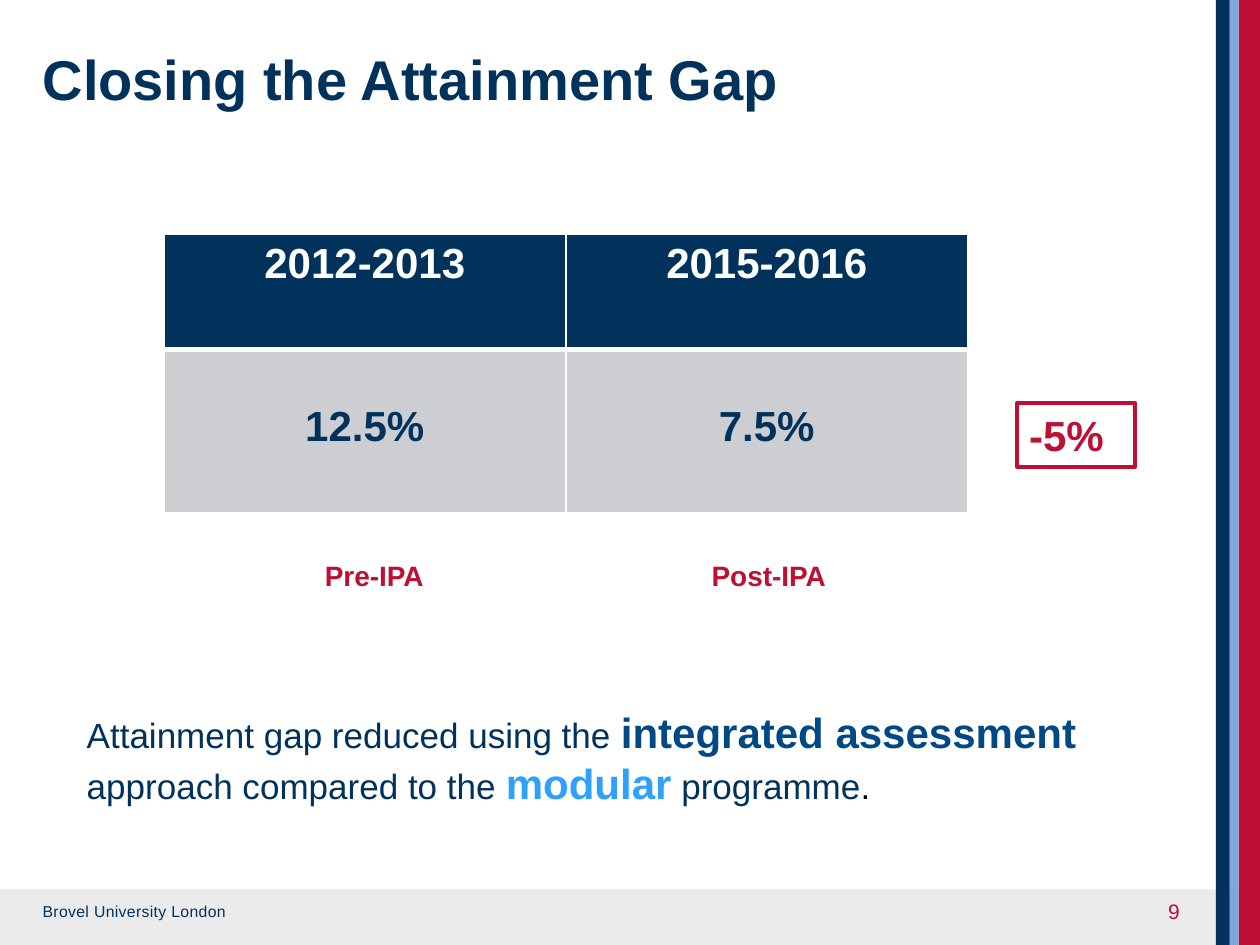
from typing import NamedTuple

import pptx
import pptx.dml.color
import pptx.enum.shapes
import pptx.enum.text
import pptx.oxml
import pptx.oxml.ns
import pptx.util

Pt = pptx.util.Pt
RGBColor = pptx.dml.color.RGBColor
Align = pptx.enum.text.PP_ALIGN
Anchor = pptx.enum.text.MSO_ANCHOR
RECT = pptx.enum.shapes.MSO_SHAPE.RECTANGLE

NAVY = RGBColor(0x00, 0x32, 0x5B)
RED = RGBColor(0xBE, 0x0F, 0x34)
LIGHT_BLUE = RGBColor(0x84, 0xA5, 0xDC)
MID_BLUE = RGBColor(0x00, 0x49, 0x85)
SKY = RGBColor(0x2E, 0xA1, 0xFF)
PALE = RGBColor(0xEB, 0xEB, 0xEB)
GREY = RGBColor(0xCC, 0xCE, 0xD2)
WHITE = RGBColor(0xFF, 0xFF, 0xFF)
BLACK = RGBColor(0x00, 0x00, 0x00)
FONT = "Arial"


class Box(NamedTuple):
    x: float
    y: float
    w: float
    h: float


class Bar(NamedTuple):
    box: Box
    color: RGBColor


class Label(NamedTuple):
    box: Box
    text: str
    size: float
    color: RGBColor
    bold: bool = False
    align: Align = Align.LEFT
    anchor: Anchor = Anchor.TOP


class Span(NamedTuple):
    text: str
    color: RGBColor
    size: float = 20
    bold: bool = False


class Row(NamedTuple):
    texts: tuple
    height: float
    fill: RGBColor
    color: RGBColor
    margin_top: float
    rule: float


BARS = [
    Bar(Box(0, 508.3, 720, 31.7), PALE),
    Bar(Box(707.8, 0, 12.2, 540), RED),
    Bar(Box(702.7, 0, 5.1, 540), LIGHT_BLUE),
    Bar(Box(694.8, 0, 7.9, 540), NAVY),
]
FOOTER = Label(Box(17.3, 511.9, 127.4, 18), "Brovel University London", 9, NAVY)
LABELS = [
    Label(Box(17.3, 21.6, 655.2, 72.7), "Closing the Attainment Gap", 32, NAVY, True),
    Label(Box(513.4, 506.2, 167.8, 28.8), "9", 12, RED,
          align=Align.RIGHT, anchor=Anchor.MIDDLE),
    Label(Box(178.6, 315.4, 90.7, 26.6), "Pre-IPA", 16, RED, True),
    Label(Box(399.6, 315.4, 90.7, 26.6), "Post-IPA", 16, RED, True),
]
CHANGE = Label(Box(581, 230.4, 67.7, 36.4), "-5%", 24, RED, True)
ROWS = [
    Row(("2012-2013", "2015-2016"), 65.5, NAVY, WHITE, 3.6, 3),
    Row(("12.5%", "7.5%"), 93.6, GREY, NAVY, 31.2, 1),
]
TABLE = Box(93.6, 134.1, 459.4, sum(row.height for row in ROWS))
SUMMARY_BOX = Box(42.5, 400.3, 612, 65.5)
SUMMARY = [
    Span("Attainment gap reduced using the ", NAVY),
    Span("integrated assessment", MID_BLUE, 24, True),
    Span(" ", BLACK),
    Span("approach compared to the ", NAVY),
    Span("modular", SKY, 24, True),
    Span(" ", BLACK),
    Span("programme", NAVY),
    Span(".", BLACK),
]


def points(box: Box) -> list:
    return [Pt(v) for v in box]


def set_font(font, size: float, color: RGBColor, bold: bool) -> None:
    font.name, font.size, font.bold = FONT, Pt(size), bold
    font.color.rgb = color


def write(sp, label: Label) -> None:
    tf = sp.text_frame
    tf.word_wrap = True
    tf.vertical_anchor = label.anchor
    p = tf.paragraphs[0]
    p.text, p.alignment = label.text, label.align
    set_font(p.font, label.size, label.color, label.bold)


def add_label(s, label: Label):
    sp = s.shapes.add_textbox(*points(label.box))
    write(sp, label)
    return sp


def add_bar(s, bar: Bar) -> None:
    sp = s.shapes.add_shape(RECT, *points(bar.box))
    sp.shadow.inherit = False
    sp.fill.solid()
    sp.fill.fore_color.rgb = bar.color
    sp.line.fill.background()


def set_borders(cell, top: float, bottom: float) -> None:
    """Give the cell white borders, with 1 pt sides."""
    ns = pptx.oxml.ns.nsdecls("a")
    tc_pr = cell._tc.get_or_add_tcPr()
    sides = [("L", 1), ("R", 1), ("T", top), ("B", bottom)]
    for i, (side, width) in enumerate(sides):
        tc_pr.insert(i, pptx.oxml.parse_xml(
            f'<a:ln{side} {ns} w="{Pt(width)}"><a:solidFill>'
            f'<a:srgbClr val="{WHITE}"/></a:solidFill></a:ln{side}>'))


def add_gap_table(s) -> None:
    table = s.shapes.add_table(len(ROWS), 2, *points(TABLE)).table
    for col in table.columns:
        col.width = Pt(TABLE.w / 2)
    top = 1
    for i, row in enumerate(ROWS):
        table.rows[i].height = Pt(row.height)
        for cell, text in zip(table.rows[i].cells, row.texts):
            cell.fill.solid()
            cell.fill.fore_color.rgb = row.fill
            cell.margin_top = Pt(row.margin_top)
            p = cell.text_frame.paragraphs[0]
            p.text, p.alignment = text, Align.CENTER
            set_font(p.font, 24, row.color, True)
            set_borders(cell, top, row.rule)
        top = row.rule


def add_change_box(s) -> None:
    sp = s.shapes.add_shape(RECT, *points(CHANGE.box))
    sp.shadow.inherit = False
    sp.fill.background()
    sp.line.color.rgb = RED
    sp.line.width = Pt(2.25)
    write(sp, CHANGE)


def add_summary(s) -> None:
    tf = s.shapes.add_textbox(*points(SUMMARY_BOX)).text_frame
    tf.word_wrap = True
    p = tf.paragraphs[0]
    for span in SUMMARY:
        r = p.add_run()
        r.text = span.text
        set_font(r.font, span.size, span.color, span.bold)


def main() -> None:
    prs = pptx.Presentation()
    prs.slide_width, prs.slide_height = Pt(720), Pt(540)
    s = prs.slides.add_slide(prs.slide_layouts[6])
    for bar in BARS:
        add_bar(s, bar)
    footer = add_label(s, FOOTER)
    footer.text_frame.paragraphs[0].runs[0].font._element.set("spc", "20")
    for label in LABELS:
        add_label(s, label)
    add_gap_table(s)
    add_change_box(s)
    add_summary(s)
    prs.save("out.pptx")


if __name__ == "__main__":
    main()
